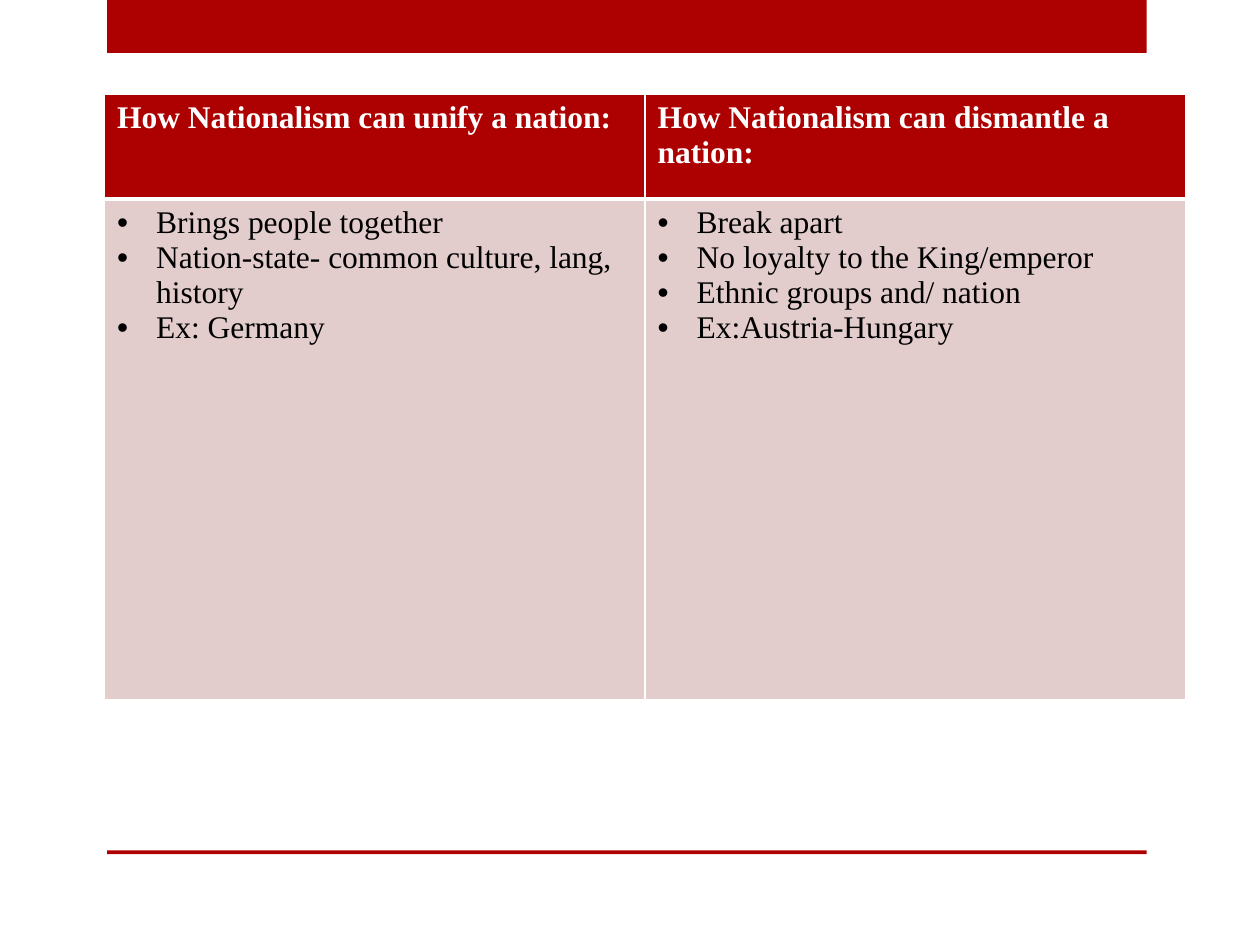
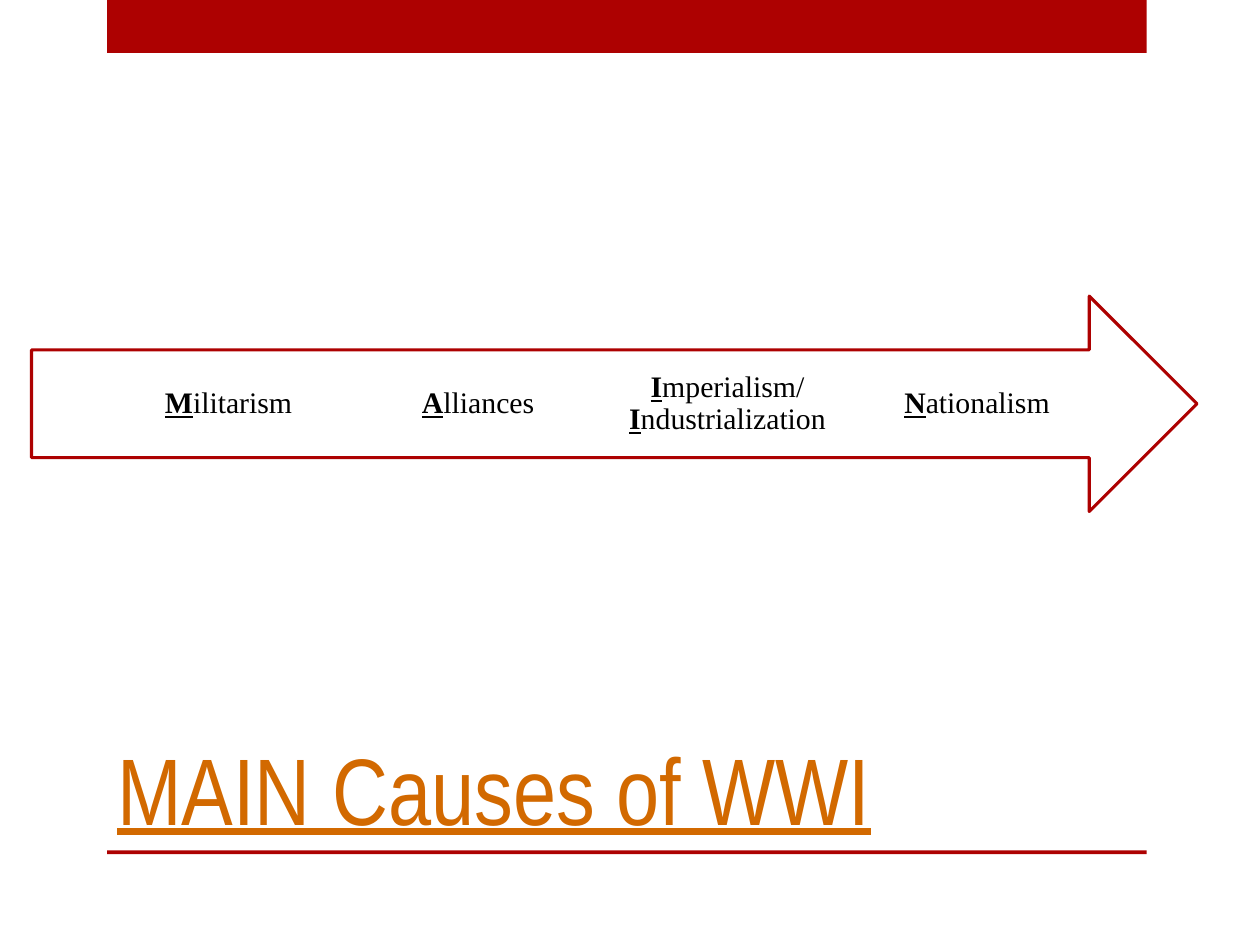
"""Build two slides on nationalism and the main causes of WWI."""
import lxml.etree
import pptx
import pptx.dml.color
import pptx.enum.shapes
import pptx.enum.text
import pptx.oxml.ns
import pptx.util

Inches = pptx.util.Inches
Pt = pptx.util.Pt
Shape = pptx.enum.shapes.MSO_SHAPE
Align = pptx.enum.text.PP_ALIGN
Anchor = pptx.enum.text.MSO_ANCHOR

RED, PINK, ORANGE, WHITE, BLACK = "AD0101", "E3CCCC", "D26900", "FFFFFF", "000000"
BODY_FONT, TITLE_FONT = "Times New Roman", "Arial Narrow"

EFFECTS = [
    ("How Nationalism can unify a nation:", [
        "Brings people together",
        "Nation-state- common culture, lang, history",
        "Ex: Germany",
    ]),
    ("How Nationalism can dismantle a nation:", [
        "Break apart",
        "No loyalty to the King/emperor",
        "Ethnic groups and/ nation",
        "Ex:Austria-Hungary",
    ]),
]
TITLE = "MAIN Causes of WWI"
CAUSES = [
    [("M", "ilitarism")],
    [("A", "lliances")],
    [("I", "mperialism/ "), ("I", "ndustrialization")],
    [("N", "ationalism")],
]
BANDS = [(0, 0.42), (6.75, 0.03)]
ROW_HEIGHTS = [0.83, 3.97]
COLUMN_WIDTH = 4.29
CAUSE_LEFT, CAUSE_STEP, CAUSE_WIDTH = 0.99, 1.98, 1.65


def color(value):
    return pptx.dml.color.RGBColor.from_string(value)


def add_text(paragraph, text, size=18, font=BODY_FONT, fill=BLACK, bold=False, underline=False):
    run = paragraph.add_run()
    run.text = text
    run.font.size = Pt(size)
    run.font.name = font
    run.font.color.rgb = color(fill)
    run.font.bold = bold
    run.font.underline = underline


def add_box(slide, kind, left, top, width, height, fill, line=None):
    shape = slide.shapes.add_shape(kind, Inches(left), Inches(top), Inches(width), Inches(height))
    shape.shadow.inherit = False
    shape.fill.solid()
    shape.fill.fore_color.rgb = color(fill)
    if line:
        shape.line.color.rgb = color(line)
        shape.line.width = Pt(1.75)
    else:
        shape.line.fill.background()


def add_child(parent, tag, **attributes):
    return lxml.etree.SubElement(parent, pptx.oxml.ns.qn(tag), attributes)


def add_bullet(paragraph):
    properties = paragraph._p.get_or_add_pPr()
    properties.set("marL", str(Inches(0.31)))
    properties.set("indent", str(Inches(-0.31)))
    add_child(properties, "a:buFont", typeface="Arial")
    add_child(properties, "a:buChar", char="•")


def style_cell(cell, fill, top, bottom):
    properties = cell._tc.get_or_add_tcPr()
    for side, width in (("L", 1), ("R", 1), ("T", top), ("B", bottom)):
        line = add_child(properties, f"a:ln{side}", w=str(Pt(width)))
        add_child(add_child(line, "a:solidFill"), "a:srgbClr", val=WHITE)
    cell.fill.solid()
    cell.fill.fore_color.rgb = color(fill)


def add_slide(presentation, layout):
    slide = presentation.slides.add_slide(presentation.slide_layouts[layout])
    for top, height in BANDS:
        add_box(slide, Shape.RECTANGLE, 0.85, top, 8.25, height, RED)
    return slide


def build_effects(presentation):
    slide = add_slide(presentation, 6)
    table = slide.shapes.add_table(
        2, len(EFFECTS), Inches(0.83), Inches(0.75),
        Inches(COLUMN_WIDTH * len(EFFECTS)), Inches(sum(ROW_HEIGHTS))).table
    for row, height in zip(table.rows, ROW_HEIGHTS):
        row.height = Inches(height)
    for index, (heading, points) in enumerate(EFFECTS):
        table.columns[index].width = Inches(COLUMN_WIDTH)
        header, body = table.cell(0, index), table.cell(1, index)
        style_cell(header, RED, 1, 3)
        style_cell(body, PINK, 3, 1)
        add_text(header.text_frame.paragraphs[0], heading, fill=WHITE, bold=True)
        for number, point in enumerate(points):
            frame = body.text_frame
            paragraph = frame.add_paragraph() if number else frame.paragraphs[0]
            add_bullet(paragraph)
            add_text(paragraph, point)


def build_causes(presentation):
    slide = add_slide(presentation, 5)
    title = slide.shapes.title
    title.left, title.top = Inches(0.83), Inches(5)
    title.width, title.height = Inches(7.42), Inches(1.75)
    frame = title.text_frame
    frame.auto_size = pptx.enum.text.MSO_AUTO_SIZE.NONE
    frame.vertical_anchor = Anchor.BOTTOM
    frame.paragraphs[0].alignment = Align.LEFT
    add_text(frame.paragraphs[0], TITLE, size=54, font=TITLE_FONT, fill=ORANGE, underline=True)

    add_box(slide, Shape.RIGHT_ARROW, 0.25, 2.35, 9.25, 1.71, WHITE, line=RED)
    for index, words in enumerate(CAUSES):
        box = slide.shapes.add_textbox(
            Inches(CAUSE_LEFT + index * CAUSE_STEP), Inches(2.78), Inches(CAUSE_WIDTH), Inches(0.85))
        frame = box.text_frame
        frame.word_wrap = True
        frame.vertical_anchor = Anchor.MIDDLE
        frame.margin_left = frame.margin_right = 0
        frame.margin_top = frame.margin_bottom = Inches(0.19)
        paragraph = frame.paragraphs[0]
        paragraph.alignment = Align.CENTER
        paragraph.line_spacing = 0.9
        for initial, rest in words:
            add_text(paragraph, initial, size=17, bold=True, underline=True)
            add_text(paragraph, rest, size=17)


def main():
    presentation = pptx.Presentation()
    presentation.slide_width, presentation.slide_height = Inches(10), Inches(7.5)
    build_effects(presentation)
    build_causes(presentation)
    presentation.save("out.pptx")


if __name__ == "__main__":
    main()
